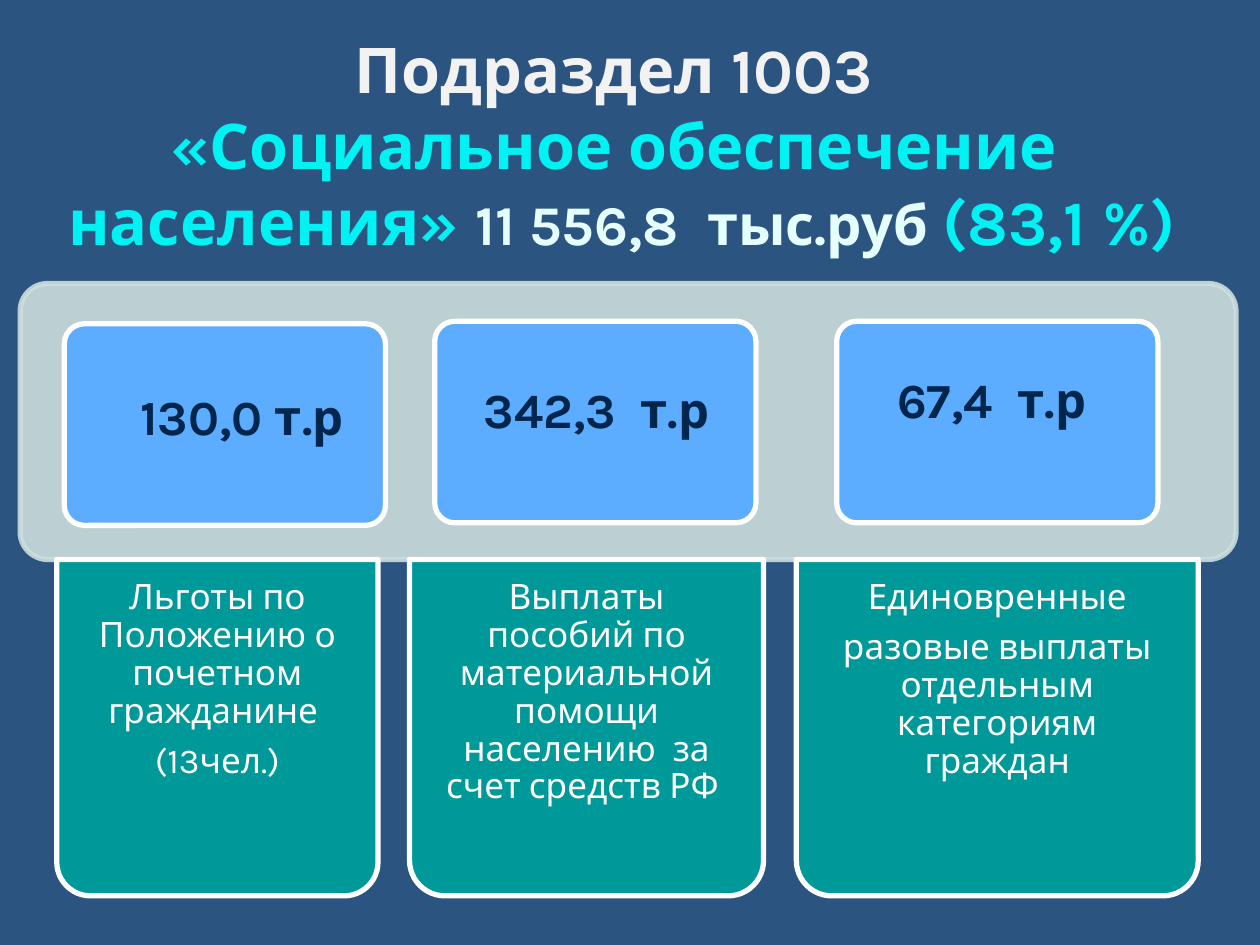
from lxml import etree
from pptx import Presentation
from pptx.dml.color import RGBColor
from pptx.enum.shapes import MSO_SHAPE as SHAPE
from pptx.enum.text import MSO_ANCHOR as ANCHOR, MSO_AUTO_SIZE as FIT, PP_ALIGN as ALIGN
from pptx.oxml.ns import qn
from pptx.util import Inches, Pt


def rgb(value):
    return RGBColor.from_string(value)


def add_block(kind, box, adjustments, fill, line):
    """Add an outlined block without text."""
    sp = s.shapes.add_shape(kind, *[Inches(v) for v in box])
    for i, value in enumerate(adjustments):
        sp.adjustments[i] = value
    sp.shadow.inherit = False
    sp.fill.solid()
    sp.fill.fore_color.rgb = rgb(fill)
    sp.line.color.rgb = rgb(line)
    sp.line.width = Pt(3)
    return sp


prs = Presentation()
prs.slide_width, prs.slide_height = Inches(10), Inches(7.5)
s = prs.slides.add_slide(prs.slide_layouts[5])
s.background.fill.solid()
s.background.fill.fore_color.rgb = rgb("2B5481")

# Title
title = s.shapes.title
title.left, title.top = Inches(-0.91), Inches(0.28)
title.width, title.height = Inches(11.69), Inches(1.73)
tf = title.text_frame
tf.auto_size = FIT.NONE
tf.vertical_anchor = ANCHOR.MIDDLE
p = tf.paragraphs[0]
p.alignment = ALIGN.CENTER
for text, size, color, breaks in [
    ("Подраздел 1003 ", 36, "F2F2F2", True),
    ("«Социальное обеспечение ", 36, "00F2F2", True),
    ("населения» ", 36, "00F2F2", False),
    ("11 556,8  тыс.руб ", 32, "E5FFFF", False),
    ("(83,1 %)", 36, "00F2F2", False),
]:
    r = p.add_run()
    r.text = text
    for name, value in {"name": "Karla", "size": Pt(size), "bold": True}.items():
        setattr(r.font, name, value)
    r.font.color.rgb = rgb(color)
    if breaks:
        p.add_line_break()

# Translucent band behind the amounts
band = add_block(SHAPE.ROUNDED_RECTANGLE, (0.16, 2.25, 9.65, 2.19), [0.1], "CCDEDE", "CCDEDE")
for clr in band._element.spPr.iter(qn("a:srgbClr")):
    etree.SubElement(clr, qn("a:alpha")).set("val", "90000")

# Columns: card left and top, panel left and width, amount box, amount, description
columns = [
    (0.51, 2.57, 0.45, 2.55, (0.7, 3.02, 2.44, 0.57), "130,0 т.р",
     ["Льготы по Положению о почетном гражданине ", "(13чел.)"]),
    (3.45, 2.55, 3.25, 2.81, (3.5, 2.96, 2.47, 0.57), "342,3  т.р",
     ["Выплаты пособий по материальной помощи населению  за счет средств РФ "]),
    (6.64, 2.55, 6.32, 3.19, (6.69, 2.88, 2.36, 0.57), "67,4  т.р",
     ["Единовренные", "разовые выплаты отдельным категориям граждан"]),
]
for card_x, card_y, panel_x, panel_w, amount_box, amount, description in columns:
    add_block(SHAPE.ROUNDED_RECTANGLE, (card_x, card_y, 2.55, 1.6), [0.1], "5CADFF", "FFFFFF")
    panel = add_block(SHAPE.ROUND_2_SAME_RECTANGLE, (panel_x, 4.44, panel_w, 2.67),
                      [0.105, 0], "009999", "FFFFFF")
    panel.rotation = 180

    text_box = (panel_x + 0.08, 4.44, panel_w - 0.16, 2.59)
    for box, lines, inset, size, color, bold, spacing, after in [
        (text_box, description, (0.16, 0.16), 20, "FFFFFF", False, 0.9, 7),
        (amount_box, [amount], (0.1, 0.05), 28, "00264D", True, 1.0, 0),
    ]:
        tf = s.shapes.add_textbox(*[Inches(v) for v in box]).text_frame
        tf.word_wrap = True
        tf.margin_left = tf.margin_right = Inches(inset[0])
        tf.margin_top = tf.margin_bottom = Inches(inset[1])
        for i, line in enumerate(lines):
            p = tf.add_paragraph() if i else tf.paragraphs[0]
            p.alignment = ALIGN.CENTER
            p.line_spacing = spacing
            p.space_after = Pt(after)
            r = p.add_run()
            r.text = line
            for name, value in {"name": "Karla", "size": Pt(size), "bold": bold}.items():
                setattr(r.font, name, value)
            r.font.color.rgb = rgb(color)

prs.save("out.pptx")
